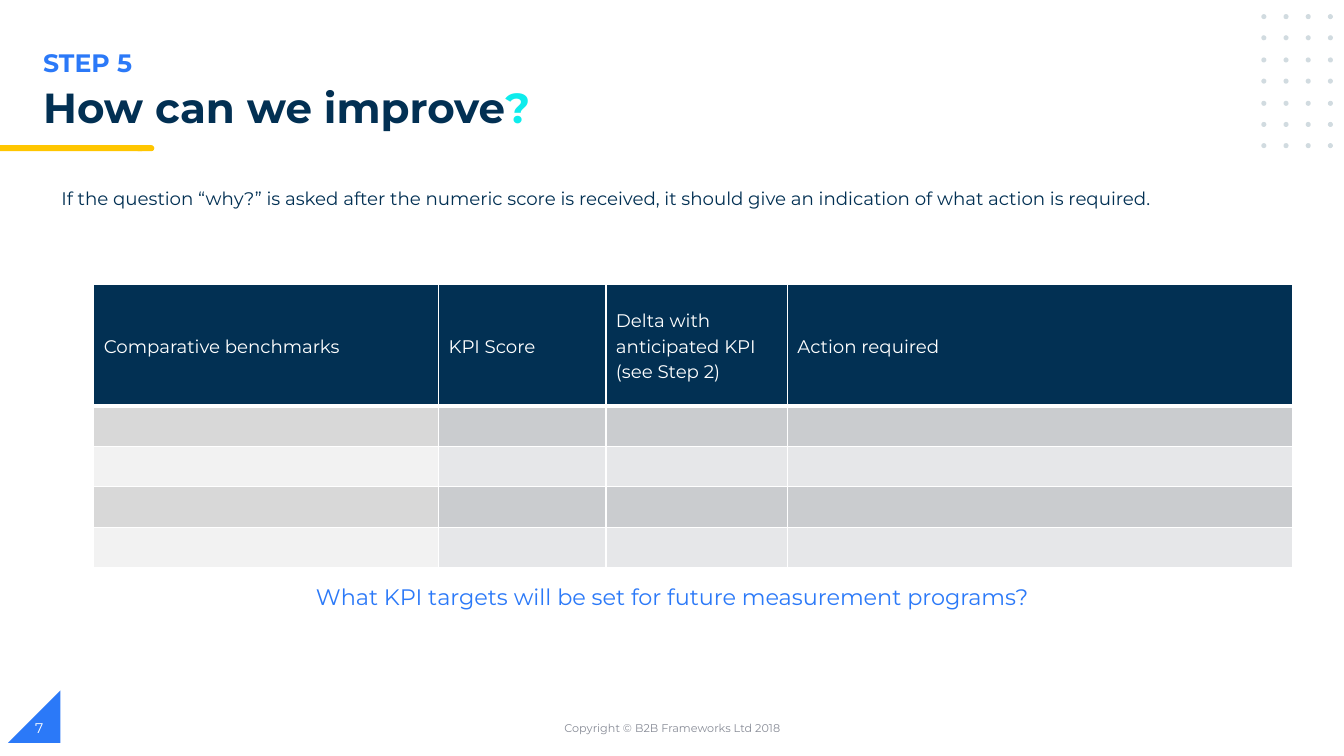
from dataclasses import dataclass
from lxml import etree
from pptx import Presentation
from pptx.dml.color import RGBColor
from pptx.enum.shapes import MSO_SHAPE
from pptx.enum.text import MSO_ANCHOR, PP_ALIGN
from pptx.oxml.ns import qn
from pptx.slide import Slide
from pptx.table import _Cell
from pptx.text.text import _Run
from pptx.util import Emu, Pt

SCALE = 9144
OVAL, RECT = MSO_SHAPE.OVAL, MSO_SHAPE.RECTANGLE
CAP, WEDGE = MSO_SHAPE.FLOWCHART_TERMINATOR, MSO_SHAPE.RIGHT_TRIANGLE
TOP, MIDDLE = MSO_ANCHOR.TOP, MSO_ANCHOR.MIDDLE
LEFT, CENTER = PP_ALIGN.LEFT, PP_ALIGN.CENTER


@dataclass(frozen=True)
class Theme:
    """Colours, font and type sizes."""
    font: str = "Montserrat"
    navy: str = "023053"
    blue: str = "2B79F8"
    aqua: str = "0EECEC"
    gold: str = "FFC600"
    dot: str = "D1DBE0"
    gray: str = "888C97"
    white: str = "FFFFFF"
    dark: tuple[str, str] = ("D8D8D8", "CACCCF")
    light: tuple[str, str] = ("F2F2F2", "E6E7E9")
    title: int = 30
    step: int = 18
    prompt: int = 16
    body: int = 13
    page: int = 10
    foot: int = 8


THEME = Theme()


@dataclass(frozen=True)
class Box:
    """A place on the slide in px."""
    left: int
    top: int
    width: int
    height: int

    def emu(self) -> tuple[Emu, Emu, Emu, Emu]:
        """Give the four lengths in EMU."""
        return px(self.left), px(self.top), px(self.width), px(self.height)


@dataclass(frozen=True)
class Form:
    """A filled preset shape."""
    kind: MSO_SHAPE
    box: Box
    fill: str
    flip: bool = False


@dataclass(frozen=True)
class Label:
    """A text box made of (text, colour) words."""
    box: Box
    words: tuple[tuple[str, str], ...]
    size: int
    bold: bool = False
    align: PP_ALIGN = LEFT
    anchor: MSO_ANCHOR = TOP
    pitch: float = 1.0


DOTS = [Form(OVAL, Box(1251 + 22 * col, 14 + round(21.4 * row), 5, 5), THEME.dot)
        for row in range(7) for col in range(4)]
FORMS = [
    Form(WEDGE, Box(8, 685, 52, 52), THEME.blue, flip=True),
    Form(CAP, Box(134, 144, 19, 6), THEME.gold),
    Form(RECT, Box(0, 144, 141, 6), THEME.gold),
    *DOTS,
]
LABELS = [
    Label(Box(51, 181, 1135, 32),
          (("If the question “why?” is asked after the numeric score is received, "
            "it should give an indication of what action is required.", THEME.navy),),
          THEME.body),
    Label(Box(247, 574, 840, 37),
          (("What KPI targets will be set for future measurement programs?", THEME.blue),),
          THEME.prompt, align=CENTER),
    Label(Box(33, 82, 564, 56), (("How can we improve", THEME.navy), ("?", THEME.aqua)),
          THEME.title, bold=True, pitch=0.9),
    Label(Box(442, 702, 450, 40), (("Copyright © B2B Frameworks Ltd 2018", THEME.gray),),
          THEME.foot, align=CENTER, anchor=MIDDLE),
    Label(Box(25, 702, 300, 40), (("7", THEME.white),), THEME.page, anchor=MIDDLE),
    Label(Box(33, 42, 669, 40), (("STEP 5", THEME.blue),), THEME.step, bold=True),
]
HEADS = ("Comparative benchmarks", "KPI Score",
         "Delta with anticipated KPI (see Step 2)", "Action required")
WIDTHS = (342, 166, 180, 501)
HEIGHTS = (121, 40, 40, 40, 40)


def px(count: int) -> Emu:
    """Turn px into EMU."""
    return Emu(count * SCALE)


def style(run: _Run, size: int, color: str, bold: bool = False) -> None:
    """Set the font of a run."""
    run.font.name = THEME.font
    run.font.size = Pt(size)
    run.font.bold = bold
    run.font.color.rgb = RGBColor.from_string(color)


def draw_form(slide: Slide, form: Form) -> None:
    """Draw a preset shape without outline."""
    shape = slide.shapes.add_shape(form.kind, *form.box.emu())
    shape.shadow.inherit = False
    shape.fill.solid()
    shape.fill.fore_color.rgb = RGBColor.from_string(form.fill)
    shape.line.fill.background()
    if form.flip:
        shape.element.spPr.find(qn("a:xfrm")).set("flipH", "1")


def draw_label(slide: Slide, label: Label) -> None:
    """Draw a text box."""
    frame = slide.shapes.add_textbox(*label.box.emu()).text_frame
    frame.word_wrap = True
    frame.vertical_anchor = label.anchor
    para = frame.paragraphs[0]
    para.alignment = label.align
    para.line_spacing = label.pitch
    for text, color in label.words:
        run = para.add_run()
        run.text = text
        style(run, label.size, color, label.bold)


def edge(cell: _Cell, row: int) -> None:
    """Give a cell white borders, thick below the head row."""
    props = cell._tc.get_or_add_tcPr()
    sides = {"L": 1, "R": 1, "T": 3 if row == 1 else 1, "B": 3 if row == 0 else 1}
    for side, width in sides.items():
        line = etree.SubElement(props, qn(f"a:ln{side}"), w=str(Pt(width)))
        fill = etree.SubElement(line, qn("a:solidFill"))
        etree.SubElement(fill, qn("a:srgbClr"), val=THEME.white)


def draw_grid(slide: Slide) -> None:
    """Draw the benchmark table."""
    box = Box(93, 282, sum(WIDTHS), sum(HEIGHTS))
    table = slide.shapes.add_table(len(HEIGHTS), len(WIDTHS), *box.emu()).table
    table.first_row = table.horz_banding = False
    for col, width in enumerate(WIDTHS):
        table.columns[col].width = px(width)
    for row, height in enumerate(HEIGHTS):
        table.rows[row].height = px(height)
        band = THEME.dark if row % 2 else THEME.light
        for col, head in enumerate(HEADS):
            cell = table.cell(row, col)
            cell.margin_top = cell.margin_bottom = 0
            cell.vertical_anchor = MIDDLE
            edge(cell, row)
            cell.fill.solid()
            color = band[min(col, 1)] if row else THEME.navy
            cell.fill.fore_color.rgb = RGBColor.from_string(color)
            if row == 0:
                cell.text_frame.text = head
                para = cell.text_frame.paragraphs[0]
                para.line_spacing = 1.15
                style(para.runs[0], THEME.body, THEME.white)


def main() -> None:
    """Build the slide and save it."""
    deck = Presentation()
    deck.slide_width, deck.slide_height = px(1333), px(750)
    slide = deck.slides.add_slide(deck.slide_layouts[6])
    for form in FORMS:
        draw_form(slide, form)
    draw_grid(slide)
    for label in LABELS:
        draw_label(slide, label)
    deck.save("out.pptx")


if __name__ == "__main__":
    main()
